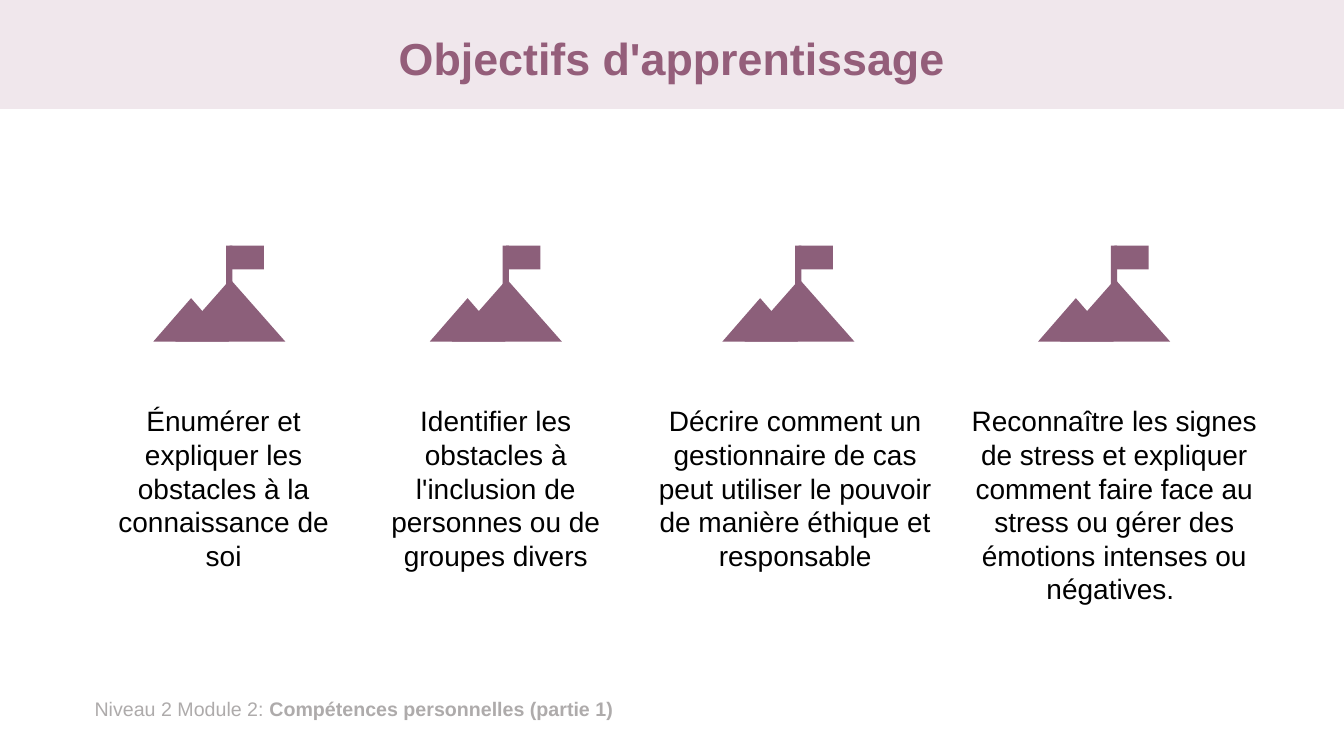
from pptx import Presentation
from pptx.dml.color import RGBColor
from pptx.enum.shapes import MSO_SHAPE as Shape
from pptx.enum.text import MSO_ANCHOR as Anchor, MSO_AUTO_SIZE as AutoSize, PP_ALIGN as Align
from pptx.util import Pt

# Content
TITLE = "Objectifs d'apprentissage"
FOOTER = [("Niveau 2 Module 2: ", False), ("Compétences personnelles (partie 1)", True)]
# text, text left, text width, icon left
OBJECTIVES = [
    ("Énumérer et expliquer les obstacles à la connaissance de soi", 66.2, 187.2, 109.5),
    ("Identifier les obstacles à l'inclusion de personnes ou de groupes divers", 260.6, 187.2, 307),
    ("Décrire comment un gestionnaire de cas peut utiliser le pouvoir de manière "
     "éthique et responsable", 462.2, 211.7, 516),
    ("Reconnaître les signes de stress et expliquer comment faire face au stress ou "
     "gérer des émotions intenses ou négatives. ", 681.1, 229.7, 741.5),
]
# Summit icon: preset, then left, top, width, height from the icon's corner
SUMMIT_PARTS = [
    (Shape.RECTANGLE, 52, 0, 4.5, 29),
    (Shape.RECTANGLE, 54.5, 0, 24.5, 17),
    (Shape.ISOSCELES_TRIANGLE, 15.8, 24, 78.5, 44.5),
    (Shape.ISOSCELES_TRIANGLE, 0, 37.5, 54, 31),
]

# Theme and layout
THEME = {
    "font": "Arial",
    "band": "F0E7EC", "title": "945E7A", "icon": "8C5F7A", "text": "000000", "footer": "AEABAB",
    "title_size": 32, "text_size": 20, "footer_size": 14,
}
WIDTH, HEIGHT = 960, 540
BAND_HEIGHT = 77.8
ICON_TOP, TEXT_TOP, TEXT_HEIGHT = 175.5, 285, 80


def write(shape, runs, size, color, align=Align.LEFT, anchor=Anchor.TOP,
          auto_size=AutoSize.SHAPE_TO_FIT_TEXT, spacing=1.0):
    frame = shape.text_frame
    frame.word_wrap = True
    frame.auto_size = auto_size
    frame.vertical_anchor = anchor
    paragraph = frame.paragraphs[0]
    paragraph.alignment = align
    paragraph.line_spacing = spacing
    for text, bold in runs:
        run = paragraph.add_run()
        run.text = text
        run.font.name = THEME["font"]
        run.font.size = Pt(size)
        run.font.bold = bold
        run.font.color.rgb = RGBColor.from_string(color)


def add_filled(shapes, preset, left, top, width, height, color):
    shape = shapes.add_shape(preset, Pt(left), Pt(top), Pt(width), Pt(height))
    shape.fill.solid()
    shape.fill.fore_color.rgb = RGBColor.from_string(color)
    shape.line.fill.background()
    shape.shadow.inherit = False
    return shape


def add_summit(slide, icon_left):
    group = slide.shapes.add_group_shape()
    for preset, left, top, width, height in SUMMIT_PARTS:
        add_filled(group.shapes, preset, icon_left + left, ICON_TOP + top,
                   width, height, THEME["icon"])


def main():
    presentation = Presentation()
    presentation.slide_width, presentation.slide_height = Pt(WIDTH), Pt(HEIGHT)
    slide = presentation.slides.add_slide(presentation.slide_layouts[5])

    # Title over its band
    title = slide.shapes.title
    title.left, title.top, title.width, title.height = Pt(66), Pt(9.4), Pt(828), Pt(68.4)
    write(title, [(TITLE, True)], THEME["title_size"], THEME["title"], align=Align.CENTER,
          anchor=Anchor.MIDDLE, auto_size=AutoSize.NONE, spacing=0.9)
    band = add_filled(slide.shapes, Shape.RECTANGLE, 0, 0, WIDTH, BAND_HEIGHT, THEME["band"])
    title.element.addprevious(band.element)

    # Objectives, each under a summit
    for text, text_left, text_width, icon_left in OBJECTIVES:
        add_summit(slide, icon_left)
        box = slide.shapes.add_textbox(Pt(text_left), Pt(TEXT_TOP), Pt(text_width), Pt(TEXT_HEIGHT))
        write(box, [(text, False)], THEME["text_size"], THEME["text"], align=Align.CENTER)

    # Footer
    footer = slide.shapes.add_textbox(Pt(60.5), Pt(494.6), Pt(817), Pt(24.5))
    write(footer, FOOTER, THEME["footer_size"], THEME["footer"])

    presentation.save("out.pptx")


if __name__ == "__main__":
    main()
